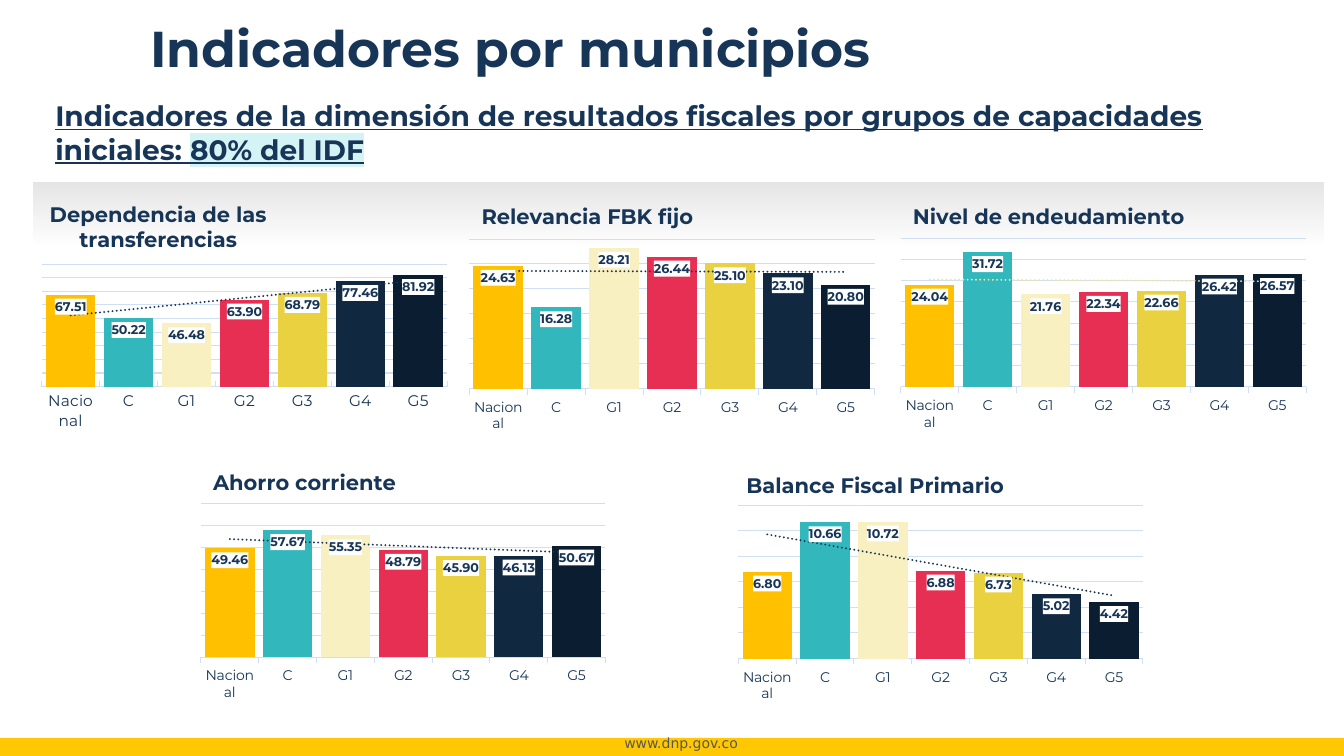
from lxml import etree
from pptx import Presentation
from pptx.chart.data import CategoryChartData
from pptx.dml.color import RGBColor
from pptx.enum.chart import XL_CHART_TYPE as ChartType, XL_LABEL_POSITION as LabelPosition
from pptx.enum.chart import XL_TICK_MARK as TickMark
from pptx.enum.dml import MSO_LINE
from pptx.enum.shapes import MSO_SHAPE as Shape
from pptx.enum.text import MSO_ANCHOR as Anchor, PP_ALIGN as Align
from pptx.oxml import parse_xml
from pptx.oxml.ns import nsdecls, qn
from pptx.util import Inches, Pt

COLORS = {"navy": "173557", "white": "FFFFFF", "gold": "FFC802", "gray": "575756",
          "shade": "4D4D4D", "highlight": "D4F3F4", "grid": "D0E0F2", "sand": "F3E697"}
GROUP_COLORS = {"Nacional": "FFC000", "C": "31B7BC", "G1": "F8F0C1", "G2": "E72F54",
                "G3": "E9D13F", "G4": "112841", "G5": "0B1E31"}
FONT = "Montserrat"


def rgb(name):
    return RGBColor.from_string(COLORS.get(name, name))


def write(paragraph, text, size=10, color="navy", font=FONT, bold=False,
          underline=False, highlight=None):
    run = paragraph.add_run()
    run.text = text
    run.font.size = Pt(size)
    run.font.bold = bold
    run.font.underline = underline
    run.font.color.rgb = rgb(color)
    run.font.name = font
    if highlight:
        mark = parse_xml(f'<a:highlight {nsdecls("a")}><a:srgbClr val="{COLORS[highlight]}"/></a:highlight>')
        run.font._element.find(qn("a:solidFill")).addnext(mark)


prs = Presentation()
prs.slide_width, prs.slide_height = Inches(13.33), Inches(7.5)
slide = prs.slides.add_slide(prs.slide_layouts[6])
shapes = slide.shapes

# Footer
footer_band = shapes.add_shape(Shape.RECTANGLE, Inches(0), Inches(7.32), Inches(13.33), Inches(0.2))
footer_band.shadow.inherit = False
footer_band.fill.solid()
footer_band.fill.fore_color.rgb = rgb("gold")
footer_band.line.fill.background()
website = shapes.add_textbox(Inches(5.7), Inches(7.24), Inches(2.11), Inches(0.27)).text_frame
website.word_wrap = True
website.paragraphs[0].alignment = Align.CENTER
write(website.paragraphs[0], "www.dnp.gov.co", color="gray", font="DejaVu Sans")

# Subtitle
subtitle = shapes.add_textbox(Inches(0.45), Inches(0.93), Inches(12.44), Inches(0.77)).text_frame
subtitle.word_wrap = True
subtitle.paragraphs[0].space_after = Pt(6)
write(subtitle.paragraphs[0],
      "Indicadores de la dimensión de resultados fiscales por grupos de capacidades iniciales: ",
      size=20, bold=True, underline=True)
write(subtitle.paragraphs[0], "80% del IDF", size=20, bold=True, underline=True, highlight="highlight")

# Shaded strip that fades downwards
strip = shapes.add_shape(Shape.RECTANGLE, Inches(0.33), Inches(1.81), Inches(12.8), Inches(0.64))
strip.shadow.inherit = False
strip.line.fill.background()
stops = "".join(f'<a:gs pos="{pos}"><a:srgbClr val="{COLORS["shade"]}"><a:alpha val="{alpha}"/></a:srgbClr></a:gs>'
                for pos, alpha in ((0, 15000), (100000, 0)))
strip._element.spPr.find(qn("a:prstGeom")).addnext(parse_xml(
    f'<a:gradFill {nsdecls("a")} rotWithShape="1"><a:gsLst>{stops}</a:gsLst>'
    '<a:lin ang="5400000" scaled="0"/></a:gradFill>'))

# Title
heading = shapes.add_shape(Shape.RECTANGLE, Inches(1.39), Inches(0.18), Inches(10), Inches(0.65))
heading.shadow.inherit = False
heading.fill.solid()
heading.fill.fore_color.rgb = rgb("white")
heading.line.fill.background()
heading.text_frame.word_wrap = True
heading.text_frame.vertical_anchor = Anchor.MIDDLE
heading_line = heading.text_frame.paragraphs[0]
heading_line.alignment = Align.LEFT
heading_line.line_spacing = 0.9
write(heading_line, "Indicadores por municipios", size=36, bold=True)


def layout(x, y, w=None, h=None):
    """Manual chart layout in fractions of the chart; with a size it is the inner plot."""
    element = parse_xml(f'<c:layout {nsdecls("c")}><c:manualLayout/></c:layout>')
    parts = [("xMode", "edge"), ("yMode", "edge"), ("x", x), ("y", y)]
    if w:
        parts = [("layoutTarget", "inner")] + parts + [("w", w), ("h", h)]
    for tag, value in parts:
        etree.SubElement(element[0], qn(f"c:{tag}")).set("val", str(value))
    return element


# Indicators: title, values, frame, title place, plot top and height, axis top and step
INDICATORS = [
    ("Dependencia de las transferencias", (67.51, 50.22, 46.48, 63.9, 68.79, 77.46, 81.92),
     (0.33, 1.84, 4.19, 2.56), (0.03, 0.04), (0.305, 0.475), (90, 10)),
    ("Relevancia FBK fijo", (24.63, 16.28, 28.21, 26.44, 25.1, 23.1, 20.8),
     (4.57, 1.86, 4.19, 2.56), (0.04, 0.04), (0.2, 0.58), (30, 5)),
    ("Nivel de endeudamiento", (24.04, 31.72, 21.76, 22.34, 22.66, 26.42, 26.57),
     (8.85, 1.84, 4.19, 2.56), (0.04, 0.05), (0.205, 0.575), (35, 5)),
    ("Ahorro corriente", (49.46, 57.67, 55.35, 48.79, 45.9, 46.13, 50.67),
     (1.91, 4.5, 4.18, 2.59), (0.04, 0.04), (0.19, 0.59), (70, 10)),
    ("Balance Fiscal Primario", (6.8, 10.66, 10.72, 6.88, 6.73, 5.02, 4.42),
     (7.24, 4.48, 4.18, 2.6), (0.03, 0.06), (0.205, 0.585), (12, 2)),
]

for title, values, frame, title_place, (plot_top, plot_height), (axis_top, step) in INDICATORS:
    data = CategoryChartData(number_format="0.00")
    data.categories = list(GROUP_COLORS)
    data.add_series("Series 1", values)
    chart = shapes.add_chart(ChartType.COLUMN_CLUSTERED, *map(Inches, frame), data).chart
    chart.has_legend = False
    chart.font.size = Pt(10)
    chart.font.name = FONT
    chart.font.color.rgb = rgb("navy")
    first = title.startswith("Dependencia")

    # Chart title and plot area
    write(chart.chart_title.text_frame.paragraphs[0], title, size=15, bold=True)
    chart.chart_title.include_in_layout = False
    title_xml = chart.chart_title._element
    plot_xml = chart._chartSpace.chart.plotArea
    for part in (title_xml, plot_xml):
        for automatic in part.findall(qn("c:layout")):
            part.remove(automatic)
    title_xml.find(qn("c:tx")).addnext(layout(*title_place))
    plot_xml.insert(0, layout(0.02, plot_top, 0.96, plot_height))

    # Axes
    groups, scale = chart.category_axis, chart.value_axis
    groups.major_tick_mark = TickMark.INSIDE if first else TickMark.OUTSIDE
    groups.tick_labels.font.size = Pt(11 if first else 10)
    groups.tick_labels.font.name = FONT
    groups.tick_labels.font.color.rgb = rgb("navy")
    scale.visible = False
    scale.minimum_scale, scale.maximum_scale, scale.major_unit = 0, axis_top, step
    scale.has_major_gridlines = True
    for line in (groups.format.line, scale.major_gridlines.format.line):
        line.color.rgb = rgb("grid")
        line.width = Pt(0.75)

    # Columns
    plot = chart.plots[0]
    plot.vary_by_categories = False
    plot.gap_width, plot.overlap = 17, 18
    columns = plot.series[0]
    columns.invert_if_negative = False
    for index, color in enumerate(GROUP_COLORS.values()):
        fill = columns.points[index].format.fill
        fill.solid()
        fill.fore_color.rgb = rgb(color)

    # Value labels on white
    labels = columns.data_labels
    labels.show_value = True
    labels.position = LabelPosition.INSIDE_END
    labels.number_format, labels.number_format_is_linked = "0.00", False
    labels.font.size = Pt(9)
    labels.font.bold = True
    labels.font.name = FONT
    labels.font.color.rgb = rgb("navy")
    labels._element.find(qn("c:numFmt")).addnext(parse_xml(
        f'<c:spPr {nsdecls("c", "a")}><a:solidFill><a:srgbClr val="{COLORS["white"]}"/></a:solidFill></c:spPr>'))

    # Dotted linear trend
    trend_color = COLORS["sand" if title.startswith("Nivel") else "navy"]
    columns._element.find(qn("c:cat")).addprevious(parse_xml(
        f'<c:trendline {nsdecls("c", "a")}><c:spPr><a:ln w="{Pt(1.5)}" cap="rnd"><a:solidFill>'
        f'<a:srgbClr val="{trend_color}"/></a:solidFill><a:prstDash val="sysDot"/></a:ln></c:spPr>'
        '<c:trendlineType val="linear"/><c:dispRSqr val="0"/><c:dispEq val="0"/></c:trendline>'))

prs.save("out.pptx")
